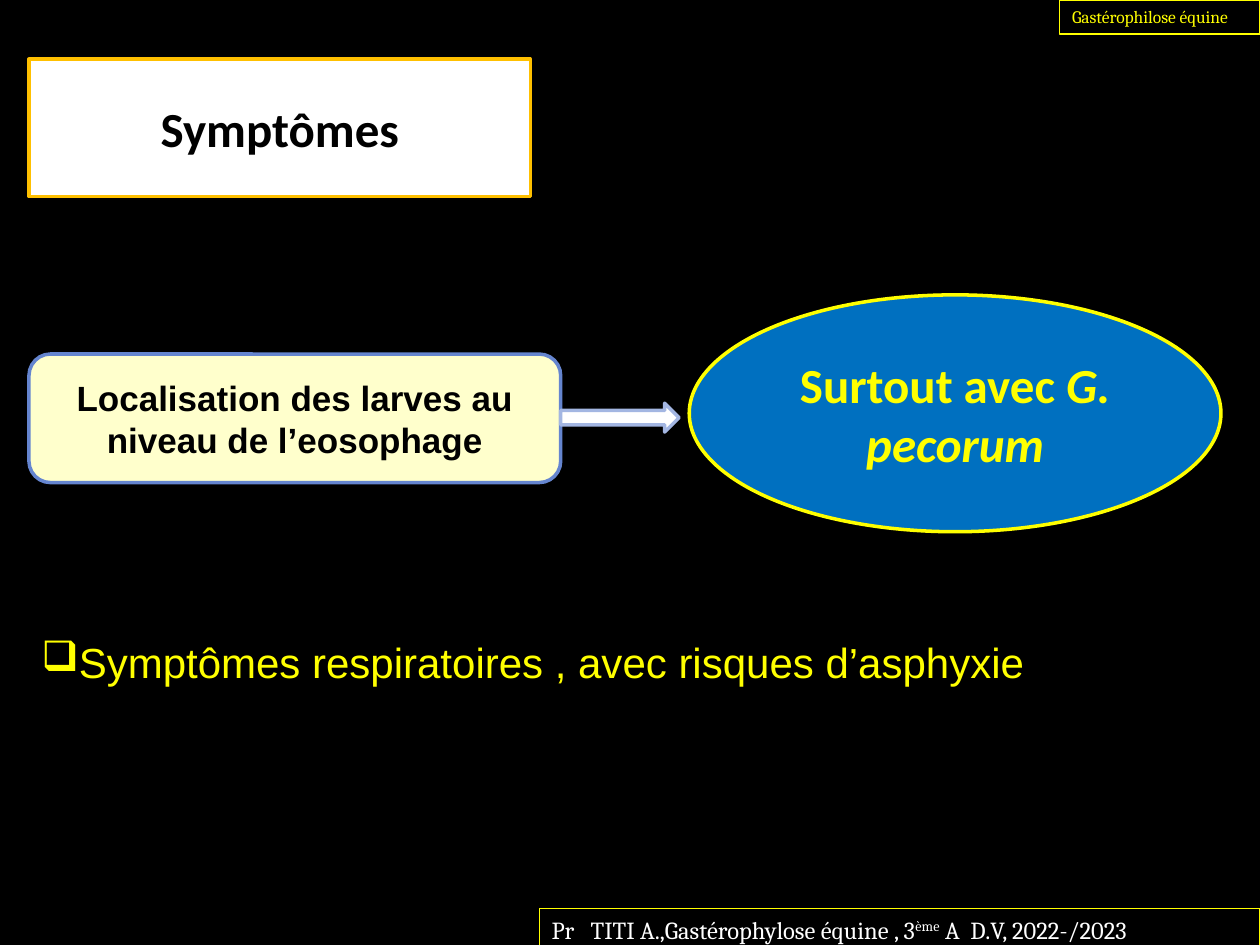
from lxml.etree import SubElement
from pptx import Presentation
from pptx.dml.color import RGBColor
from pptx.enum.shapes import MSO_SHAPE as SHAPE
from pptx.enum.text import MSO_ANCHOR as ANCHOR, MSO_AUTO_SIZE as AUTO, PP_ALIGN as ALIGN
from pptx.oxml.ns import qn
from pptx.util import Inches, Pt

COLORS = {
    "black": "000000", "white": "FFFFFF", "yellow": "FFFF00", "orange": "FFC000",
    "cream": "FFFFCC", "blue": "0070C0", "edge": "6585CF", "arrow": "A3B6E2",
}


def rgb(name):
    return RGBColor.from_string(COLORS[name])


def write(sp, *runs, font="Calibri", size=28, color="black", bold=False,
          align=ALIGN.CENTER, anchor=ANCHOR.MIDDLE, wrap=True, grow=False):
    """Write runs into a shape; a run is a string or (string, style)."""
    tf = sp.text_frame
    tf.word_wrap = wrap
    tf.auto_size = AUTO.SHAPE_TO_FIT_TEXT if grow else AUTO.NONE
    tf.vertical_anchor = anchor
    p = tf.paragraphs[0]
    p.alignment = align
    for run in runs:
        text, style = (run, "") if isinstance(run, str) else run
        r = p.add_run()
        r.text = text
        r.font.name, r.font.size, r.font.bold = font, Pt(size), bold
        r.font.color.rgb = rgb(color)
        if style == "italic":
            r.font.italic = True
        elif style == "super":
            r.font._element.set("baseline", "30000")
    return p


def paint(sp, fill, line, width=2):
    if fill:
        sp.fill.solid()
        sp.fill.fore_color.rgb = rgb(fill)
    else:
        sp.fill.background()
    sp.line.color.rgb = rgb(line)
    sp.line.width = Pt(width)


def add_shape(slide, kind, box, fill, line, width=2):
    sp = slide.shapes.add_shape(kind, *map(Inches, box))
    sp.shadow.inherit = False
    paint(sp, fill, line, width)
    return sp


def add_title(slide, text, box):
    """Turn the title placeholder into an ellipse."""
    sp = slide.shapes.title
    sp.left, sp.top, sp.width, sp.height = map(Inches, box)
    geom = SubElement(sp._element.spPr, qn("a:prstGeom"), prst="ellipse")
    SubElement(geom, qn("a:avLst"))
    paint(sp, "white", "orange")
    write(sp, text, bold=True)


def add_bullet_text(slide, text, box):
    sp = slide.shapes.add_textbox(*map(Inches, box))
    p = write(sp, text, font="Arial", size=24, color="yellow", align=ALIGN.LEFT,
              anchor=ANCHOR.TOP, wrap=False, grow=True)
    pPr = p._p.get_or_add_pPr()
    SubElement(pPr, qn("a:buChar"), char="❑")


def add_label(slide, box, *runs, **style):
    """Add a thin yellow frame holding a line of Cambria text."""
    sp = add_shape(slide, SHAPE.RECTANGLE, box, None, "yellow", 0.75)
    write(sp, *runs, font="Cambria", align=ALIGN.LEFT, anchor=ANCHOR.TOP,
          grow=True, **style)


def main():
    prs = Presentation()
    prs.slide_width, prs.slide_height = Inches(10), Inches(7.5)
    slide = prs.slides.add_slide(prs.slide_layouts[5])
    slide.background.fill.solid()
    slide.background.fill.fore_color.rgb = rgb("black")

    add_title(slide, "Symptômes", (0.23, 0.47, 3.98, 1.09))

    location = add_shape(slide, SHAPE.ROUNDED_RECTANGLE, (0.23, 2.81, 4.22, 1.02),
                         "cream", "edge")
    write(location, "Localisation des larves au niveau de l’eosophage",
          font="Arial", size=20, bold=True)
    species = add_shape(slide, SHAPE.OVAL, (5.47, 2.34, 4.22, 1.88), "blue", "yellow")
    write(species, "Surtout avec ", ("G. pecorum", "italic"), color="yellow", bold=True)
    add_shape(slide, SHAPE.RIGHT_ARROW, (4.45, 3.2, 0.94, 0.23), "white", "arrow")

    add_bullet_text(slide, "Symptômes respiratoires , avec risques d’asphyxie",
                    (0.23, 5, 8.08, 0.5))

    add_label(slide, (8.41, 0, 1.59, 0.27), "Gastérophilose équine",
              size=10, color="yellow", wrap=False)
    add_label(slide, (4.28, 7.21, 5.72, 0.34),
              "Pr   TITI A.,Gastérophylose équine , 3", ("ème", "super"),
              " A  D.V, 2022-/2023", size=14, color="white")

    prs.save("out.pptx")


if __name__ == "__main__":
    main()
